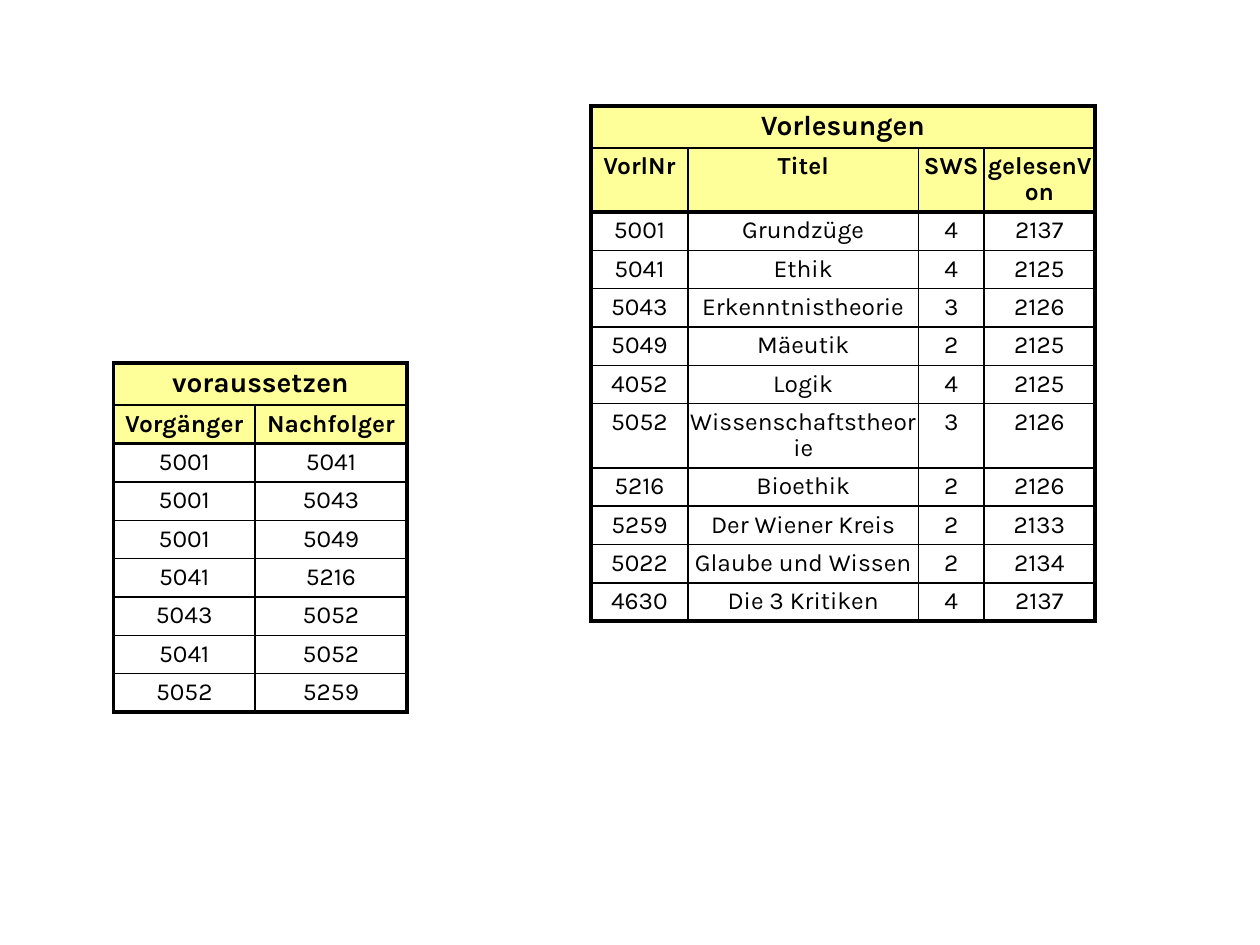
from dataclasses import dataclass

from lxml import etree
from pptx import Presentation
from pptx.dml.color import RGBColor
from pptx.enum.text import MSO_ANCHOR, PP_ALIGN
from pptx.oxml.ns import qn
from pptx.util import Pt

CENTER = PP_ALIGN.CENTER
TOP = MSO_ANCHOR.TOP
COLORS = {"ink": "000000", "header": "FFFF99"}
FONT = "Karla"
THIN, THICK = 1, 2.25
TITLE_SIZE, TEXT_SIZE = 16, 14
TITLE_HEIGHT, ROW_HEIGHT, WRAPPED_HEIGHT = 24, 21.9, 36.6


@dataclass
class Relation:
    name: str
    left: float
    top: float
    widths: list[float]
    header: list[str]
    rows: list[list[str]]
    wrapped: tuple[int, ...] = ()


RELATIONS = [
    Relation(
        "Vorlesungen", 337.7, 60.5, [55.4, 131.8, 37.4, 63.4],
        ["VorlNr", "Titel", "SWS", "gelesenVon"],
        [
            ["5001", "Grundzüge", "4", "2137"],
            ["5041", "Ethik", "4", "2125"],
            ["5043", "Erkenntnistheorie", "3", "2126"],
            ["5049", "Mäeutik", "2", "2125"],
            ["4052", "Logik", "4", "2125"],
            ["5052", "Wissenschaftstheorie", "3", "2126"],
            ["5216", "Bioethik", "2", "2126"],
            ["5259", "Der Wiener Kreis", "2", "2133"],
            ["5022", "Glaube und Wissen", "2", "2134"],
            ["4630", "Die 3 Kritiken", "4", "2137"],
        ],
        wrapped=(1, 7),
    ),
    Relation(
        "voraussetzen", 65, 207.5, [80.6, 87.1],
        ["Vorgänger", "Nachfolger"],
        [
            ["5001", "5041"],
            ["5001", "5043"],
            ["5001", "5049"],
            ["5041", "5216"],
            ["5043", "5052"],
            ["5041", "5052"],
            ["5052", "5259"],
        ],
    ),
]


def set_borders(cell, widths: dict[str, float]) -> None:
    tc_pr = cell._tc.get_or_add_tcPr()
    for side, width in widths.items():
        ln = etree.SubElement(tc_pr, qn(f"a:ln{side}"), w=str(Pt(width)))
        fill = etree.SubElement(ln, qn("a:solidFill"))
        etree.SubElement(fill, qn("a:srgbClr"), val=COLORS["ink"])


def format_cell(cell, text: str, size: float, is_header: bool) -> None:
    cell.margin_left = cell.margin_right = Pt(0)
    cell.margin_top = cell.margin_bottom = Pt(3.6)
    cell.vertical_anchor = TOP
    if is_header:
        cell.fill.solid()
        cell.fill.fore_color.rgb = RGBColor.from_string(COLORS["header"])
    else:
        cell.fill.background()
    p = cell.text_frame.paragraphs[0]
    p.text = text
    p.alignment = CENTER
    p.line_spacing = 0.9
    for r in p.runs:
        r.font.name = FONT
        r.font.size = Pt(size)
        r.font.bold = is_header
        r.font.color.rgb = RGBColor.from_string(COLORS["ink"])


def row_height(relation: Relation, row: int) -> float:
    if row == 0:
        return TITLE_HEIGHT
    return WRAPPED_HEIGHT if row in relation.wrapped else ROW_HEIGHT


def draw_relation(s, relation: Relation) -> None:
    columns = len(relation.widths)
    title = [relation.name] + [""] * (columns - 1)
    grid = [title, relation.header, *relation.rows]
    heights = [row_height(relation, i) for i in range(len(grid))]
    table = s.shapes.add_table(
        len(grid), columns, Pt(relation.left), Pt(relation.top),
        Pt(sum(relation.widths)), Pt(sum(heights)),
    ).table
    table.first_row = table.horz_banding = False
    for column, width in zip(table.columns, relation.widths):
        column.width = Pt(width)
    for row, height in zip(table.rows, heights):
        row.height = Pt(height)

    last_row, last_column = len(grid) - 1, columns - 1
    for i, texts in enumerate(grid):
        for j, text in enumerate(texts):
            cell = table.cell(i, j)
            set_borders(cell, {
                "L": THICK if j == 0 else THIN,
                "R": THICK if i == 0 or j == last_column else THIN,
                "T": THICK if i in (0, 2) else THIN,
                "B": THICK if i in (1, last_row) else THIN,
            })
            size = TITLE_SIZE if i == 0 else TEXT_SIZE
            format_cell(cell, text, size, is_header=i < 2)
    table.cell(0, 0).merge(table.cell(0, last_column))


def main() -> None:
    prs = Presentation()
    prs.slide_width, prs.slide_height = Pt(720), Pt(540)
    s = prs.slides.add_slide(prs.slide_layouts[6])
    for relation in RELATIONS:
        draw_relation(s, relation)
    prs.save("out.pptx")


if __name__ == "__main__":
    main()
